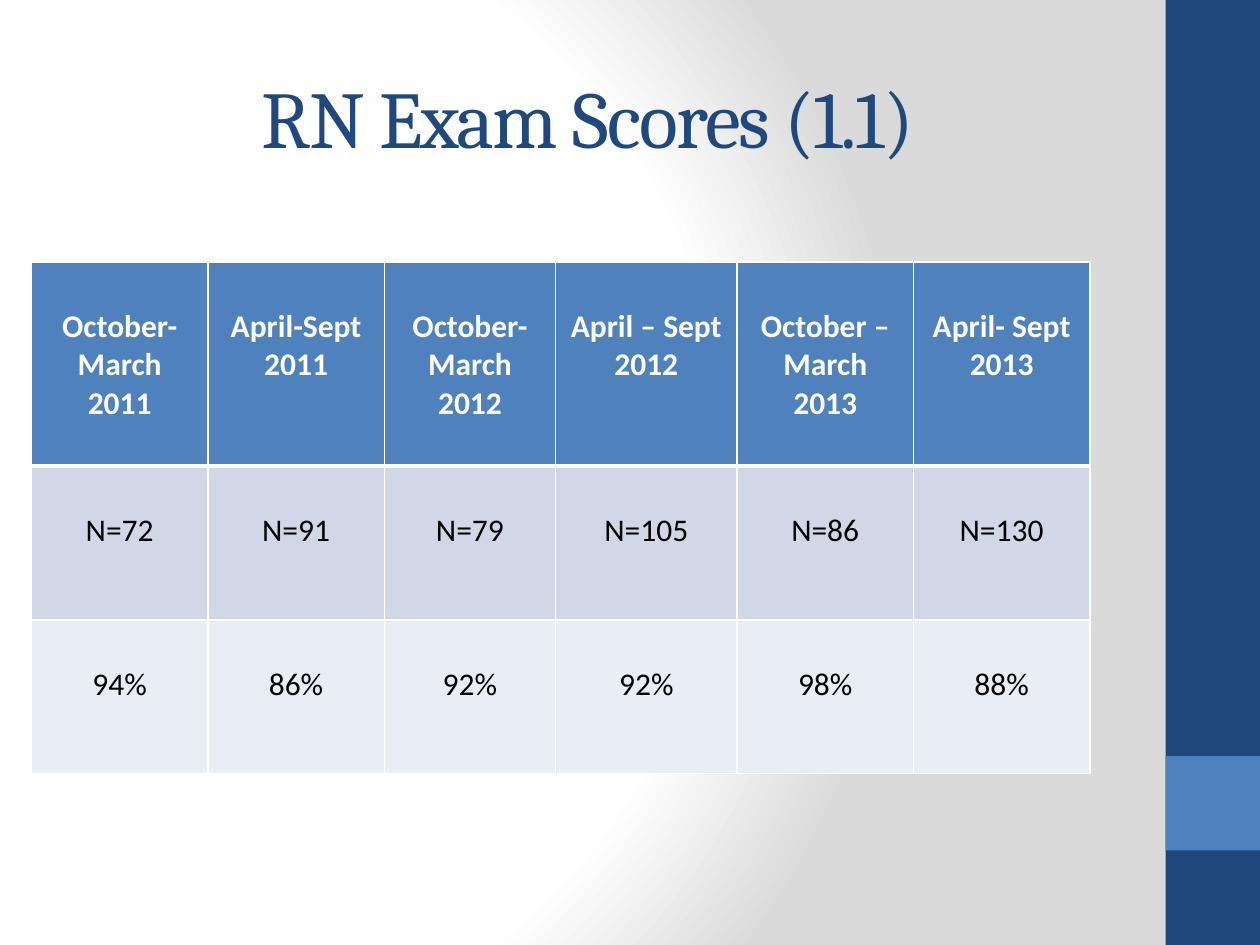
from typing import NamedTuple

from lxml import etree
from pptx import Presentation
from pptx.dml.color import RGBColor
from pptx.enum.shapes import MSO_SHAPE
from pptx.enum.text import MSO_ANCHOR, MSO_AUTO_SIZE, PP_ALIGN
from pptx.oxml.ns import qn
from pptx.util import Inches, Pt

RECT = MSO_SHAPE.RECTANGLE
MIDDLE = MSO_ANCHOR.MIDDLE
TOP = MSO_ANCHOR.TOP
CENTER = PP_ALIGN.CENTER
NO_FIT = MSO_AUTO_SIZE.NONE

NAVY, BLUE, WHITE, BLACK = "1F497D", "4F81BD", "FFFFFF", "000000"


class Bar(NamedTuple):
    top: float
    height: float
    color: str


class Row(NamedTuple):
    height: float
    fill: str
    ink: str
    bold: bool
    rule_top: int
    rule_low: int
    texts: list[str]


BARS = [Bar(0, 7.5, NAVY), Bar(6, 0.75, BLUE)]
WIDTHS = [1.4, 1.4, 1.36, 1.44, 1.4, 1.4]
ROWS = [
    Row(1.62, BLUE, WHITE, True, 1, 3,
        ["October-March\n2011", "April-Sept\n2011", "October-March\n2012",
         "April – Sept\n2012", "October –\nMarch\n2013", "April- Sept\n2013"]),
    Row(1.22, "D0D8E8", BLACK, False, 3, 1,
        ["N=72", "N=91", "N=79", "N=105", "N=86", "N=130"]),
    Row(1.22, "E9EDF4", BLACK, False, 1, 1,
        ["94%", "86%", "92%", "92%", "98%", "88%"]),
]


def rgb(code: str) -> RGBColor:
    return RGBColor.from_string(code)


def add_node(parent, tag: str, **attrs):
    return etree.SubElement(parent, qn(tag), attrs)


def paint_back(slide) -> None:
    """Radial gradient from white to grey."""
    fill = slide.background.fill
    fill.gradient()
    grad = slide.background._cSld.find(".//" + qn("a:gradFill"))
    for node in list(grad):
        grad.remove(node)
    stops = add_node(grad, "a:gsLst")
    for pos, code in [(0, WHITE), (75, WHITE), (100, "DADADA")]:
        stop = add_node(stops, "a:gs", pos=str(pos * 1000))
        add_node(stop, "a:srgbClr", val=code)
    focus = add_node(grad, "a:path", path="circle")
    add_node(focus, "a:fillToRect", l="20000", t="50000", r="100000", b="50000")


def add_bar(slide, bar: Bar) -> None:
    shape = slide.shapes.add_shape(
        RECT, Inches(9.25), Inches(bar.top), Inches(0.75), Inches(bar.height))
    shape.shadow.inherit = False
    shape.fill.solid()
    shape.fill.fore_color.rgb = rgb(bar.color)
    shape.line.fill.background()


def set_title(slide, text: str) -> None:
    title = slide.shapes.title
    title.left, title.top = Inches(0.5), Inches(0.3)
    title.width, title.height = Inches(8.33), Inches(1.25)
    frame = title.text_frame
    frame.text = text
    frame.word_wrap = True
    frame.auto_size = NO_FIT
    frame.vertical_anchor = MIDDLE
    line = frame.paragraphs[0]
    line.alignment = CENTER
    run = line.runs[0]
    run.font.size, run.font.name = Pt(46), "Cambria"
    run.font.color.rgb = rgb(NAVY)
    run._r.get_or_add_rPr().set("spc", "-100")


def set_cell(cell, row: Row, text: str) -> None:
    # Borders come before the fill
    props = cell._tc.get_or_add_tcPr()
    rules = {"L": 1, "R": 1, "T": row.rule_top, "B": row.rule_low}
    for side, width in rules.items():
        edge = add_node(props, "a:ln" + side, w=str(Pt(width)))
        add_node(add_node(edge, "a:solidFill"), "a:srgbClr", val=WHITE)
    cell.fill.solid()
    cell.fill.fore_color.rgb = rgb(row.fill)
    cell.vertical_anchor = TOP
    cell.margin_top = Inches(0.36)
    cell.text_frame.text = text
    for line in cell.text_frame.paragraphs:
        line.alignment = CENTER
        for run in line.runs:
            run.font.size, run.font.name = Pt(18), "Calibri"
            run.font.bold = row.bold
            run.font.color.rgb = rgb(row.ink)


def add_scores(slide) -> None:
    high = sum(row.height for row in ROWS)
    table = slide.shapes.add_table(
        len(ROWS), len(WIDTHS), Inches(0.25), Inches(2.08),
        Inches(sum(WIDTHS)), Inches(high)).table
    for col, width in zip(table.columns, WIDTHS):
        col.width = Inches(width)
    for r, row in enumerate(ROWS):
        table.rows[r].height = Inches(row.height)
        for c, text in enumerate(row.texts):
            set_cell(table.cell(r, c), row, text)


def main() -> None:
    deck = Presentation()
    deck.slide_width, deck.slide_height = Inches(10), Inches(7.5)
    slide = deck.slides.add_slide(deck.slide_layouts[5])
    paint_back(slide)
    # Side band
    for bar in BARS:
        add_bar(slide, bar)
    # Title and score table
    set_title(slide, "RN Exam Scores (1.1)")
    add_scores(slide)
    deck.save("out.pptx")


if __name__ == "__main__":
    main()
